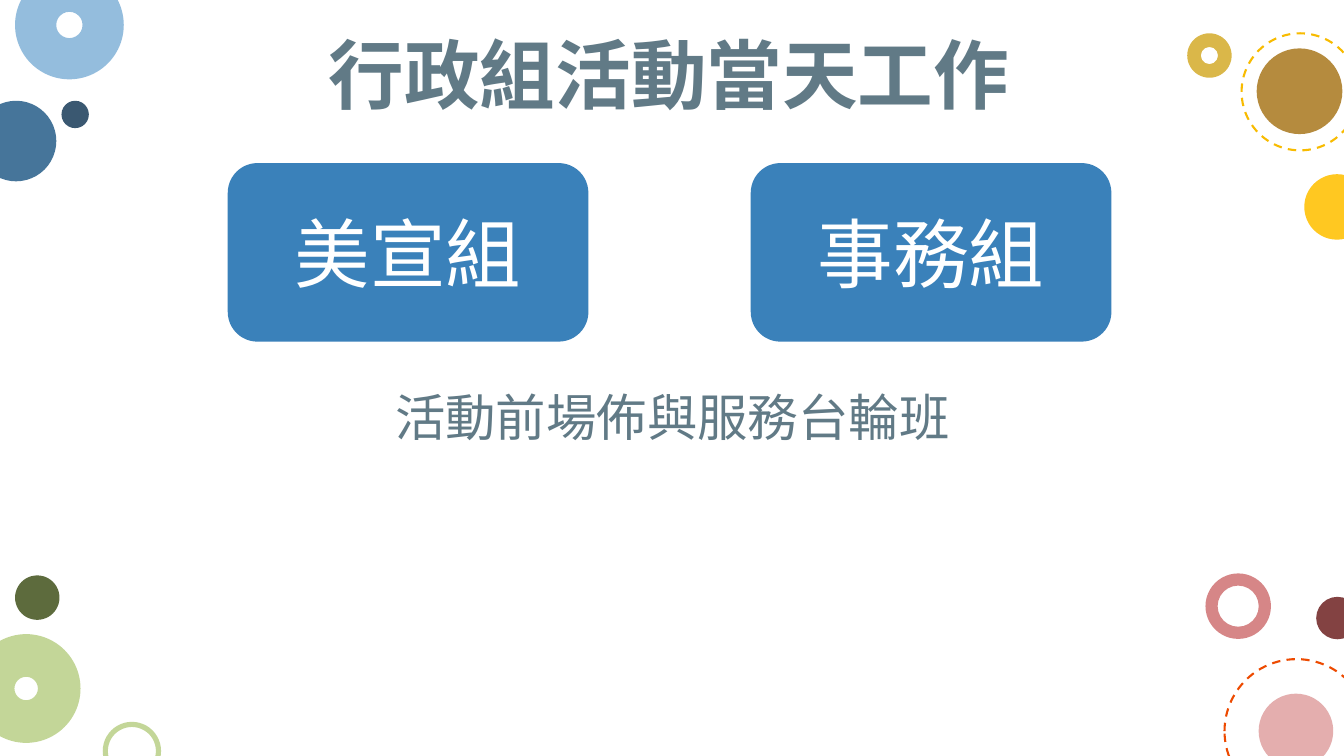
from lxml.etree import SubElement
from pptx import Presentation
from pptx.dml.color import RGBColor
from pptx.enum.dml import MSO_LINE
from pptx.enum.shapes import MSO_SHAPE
from pptx.enum.text import MSO_ANCHOR, MSO_AUTO_SIZE, PP_ALIGN
from pptx.oxml.ns import qn
from pptx.util import Cm, Pt

FONT = "Noto Sans CJK SC"
COLORS = {
    "text": "617A86", "box": "3A81BA", "white": "FFFFFF",
    "blue": "2B618B", "light blue": "85B4D9", "navy": "1D405D",
    "light green": "BBD189", "olive": "465621",
    "rose": "D07576", "maroon": "712627", "pink": "E0A3A3", "orange": "ED4A00",
    "gold": "D5AD2F", "bronze": "AB7A22", "yellow": "FFC000", "amber": "F8BB00",
}
# left, top, diameter in cm, colour
DISCS = [
    (-0.61, 2.54, 2.03, "blue"),
    (1.55, 2.54, 0.69, "navy"),
    (33.17, 15.04, 1.07, "maroon"),
    (31.72, 17.48, 1.88, "pink"),
    (31.67, 1.22, 2.16, "bronze"),
    (32.87, 4.39, 1.65, "yellow"),
    (0.38, 14.5, 1.12, "olive"),
]
# left, top, diameter in cm, colour, ring thickness as a share of the diameter
RINGS = [
    (30.38, 14.45, 1.65, "rose", 0.186),
    (0.38, -0.74, 2.74, "light blue", 0.379),
    (2.59, 18.19, 1.47, "light green", 0.088),
    (-0.71, 15.98, 2.74, "light green", 0.392),
    (29.92, 0.84, 1.12, "gold", 0.306),
]
DASHED_CIRCLES = [
    (30.86, 16.61, 3.63, "orange"),
    (31.29, 0.84, 2.95, "amber"),
]


def color(name):
    return RGBColor.from_string(COLORS[name])


def add_plain_shape(slide, kind, left, top, width, height, fill=None):
    shape = slide.shapes.add_shape(kind, Cm(left), Cm(top), Cm(width), Cm(height))
    shape.shadow.inherit = False
    shape.line.fill.background()
    if fill:
        shape.fill.solid()
        shape.fill.fore_color.rgb = color(fill)
    else:
        shape.fill.background()
    return shape


def add_bubble(slide, left, top, diameter, fill, ring=None):
    """Add a slightly transparent disc, or a ring when a thickness is given."""
    kind = MSO_SHAPE.DONUT if ring else MSO_SHAPE.OVAL
    bubble = add_plain_shape(slide, kind, left, top, diameter, diameter, fill)
    if ring:
        bubble.adjustments[0] = ring
    solid_color = bubble.element.spPr.find(qn("a:solidFill"))[0]
    SubElement(solid_color, qn("a:alpha"), val="87000")


def add_dashed_circle(slide, left, top, diameter, line):
    circle = add_plain_shape(slide, MSO_SHAPE.OVAL, left, top, diameter, diameter)
    circle.line.color.rgb = color(line)
    circle.line.width = Pt(1.5)
    circle.line.dash_style = MSO_LINE.DASH


def write_text(shape, text, size, text_color, bold=False, align=PP_ALIGN.CENTER, wrap=False):
    frame = shape.text_frame
    frame.word_wrap = wrap
    frame.auto_size = MSO_AUTO_SIZE.NONE
    frame.vertical_anchor = MSO_ANCHOR.MIDDLE
    paragraph = frame.paragraphs[0]
    paragraph.alignment = align
    run = paragraph.add_run()
    run.text = text
    run.font.size = Pt(size)
    run.font.bold = bold
    run.font.color.rgb = color(text_color)
    run.font.name = FONT
    SubElement(run.font._element, qn("a:ea"), typeface=FONT)


def add_title(slide, text):
    title = slide.shapes.title
    title.left, title.top, title.width, title.height = Cm(8.03), Cm(0.56), Cm(17.83), Cm(2.57)
    write_text(title, text, 54, "text", bold=True, align=PP_ALIGN.LEFT)


def add_team_box(slide, left, name):
    box = add_plain_shape(slide, MSO_SHAPE.ROUNDED_RECTANGLE, left, 4.11, 9.09, 4.5, "box")
    write_text(box, name, 54, "white", wrap=True)


def add_shared_duty(slide, text):
    textbox = slide.shapes.add_textbox(Cm(9.63), Cm(9.58), Cm(14.63), Cm(1.8))
    write_text(textbox, text, 36, "text")


def main():
    presentation = Presentation()
    presentation.slide_width, presentation.slide_height = Cm(33.87), Cm(19.05)
    slide = presentation.slides.add_slide(presentation.slide_layouts.get_by_name("Title Only"))

    for circle in DASHED_CIRCLES:
        add_dashed_circle(slide, *circle)
    for bubble in DISCS + RINGS:
        add_bubble(slide, *bubble)

    add_title(slide, "行政組活動當天工作")
    add_team_box(slide, 5.74, "美宣組")
    add_team_box(slide, 18.92, "事務組")
    add_shared_duty(slide, "活動前場佈與服務台輪班")

    presentation.save("out.pptx")


if __name__ == "__main__":
    main()
